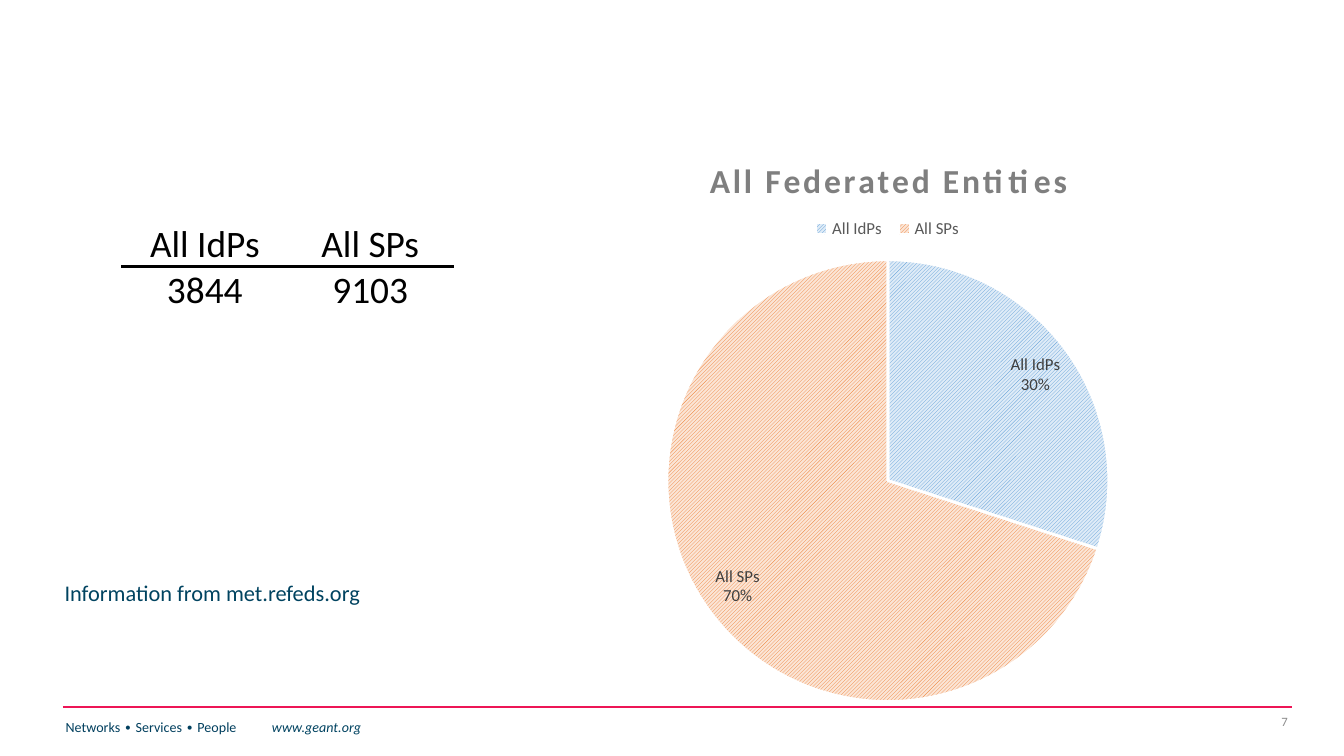
"""Build the slide that compares all federated identity and service providers."""
from dataclasses import dataclass
from typing import Optional

from lxml.etree import SubElement
from pptx import Presentation
from pptx.chart.data import CategoryChartData
from pptx.dml.color import RGBColor
from pptx.enum.chart import XL_CHART_TYPE as ChartType
from pptx.enum.chart import XL_LABEL_POSITION as LabelPosition
from pptx.enum.chart import XL_LEGEND_POSITION as LegendPosition
from pptx.enum.dml import MSO_PATTERN as Pattern
from pptx.enum.shapes import MSO_CONNECTOR as Connector
from pptx.enum.text import MSO_ANCHOR as Anchor
from pptx.enum.text import PP_ALIGN as Align
from pptx.oxml import parse_xml
from pptx.oxml.ns import nsdecls, qn
from pptx.util import Cm, Pt

FONT = "Calibri"
COLOURS = {
    "rule": "ED1556", "footer": "003F5E", "link": "004361", "source": "004360",
    "number": "8C8C8C", "black": "000000", "white": "FFFFFF", "title": "7F7F7F",
    "legend": "595959", "label": "404040", "idp": "5B9BD5", "idp_back": "DEEBF7",
    "sp": "ED7D31", "sp_back": "FBE5D6",
}


@dataclass(frozen=True)
class Span:
    text: str
    size: float
    colour: str
    italic: bool = False


@dataclass(frozen=True)
class Label:
    left: float
    top: float
    width: float
    height: float
    spans: tuple[Span, ...]
    anchor: Anchor = Anchor.TOP
    align: Align = Align.LEFT
    tab: Optional[float] = None


@dataclass(frozen=True)
class Entity:
    name: str
    count: int
    share: int
    front: str
    back: str


LABELS = (
    Label(0.99, 13.46, 8.66, 0.89,
          (Span("Networks ∙ Services ∙ People\t", 7.5, "footer"),
           Span("www.geant.org", 7.5, "link", True)), tab=3.9),
    Label(0.97, 10.8, 8.99, 0.8,
          (Span("Information from met.refeds.org", 12, "source"),), Anchor.MIDDLE),
    Label(23.04, 13.34, 1.55, 0.58, (Span("7", 6.8, "number"),),
          Anchor.MIDDLE, Align.RIGHT),
)
ENTITIES = (
    Entity("All IdPs", 3844, 30, "idp", "idp_back"),
    Entity("All SPs", 9103, 70, "sp", "sp_back"),
)


def rgb(name: str) -> RGBColor:
    return RGBColor.from_string(COLOURS[name])


def style(font, size: float, colour: str, bold: bool = False, italic: bool = False) -> None:
    font.name, font.size = FONT, Pt(size)
    font.bold, font.italic = bold, italic
    font.color.rgb = rgb(colour)


def add_span(para, span: Span) -> None:
    run = para.add_run()
    run.text = span.text
    style(run.font, span.size, span.colour, italic=span.italic)


def draw_label(page, label: Label) -> None:
    box = page.shapes.add_textbox(
        Cm(label.left), Cm(label.top), Cm(label.width), Cm(label.height))
    frame = box.text_frame
    frame.word_wrap = True
    frame.vertical_anchor = label.anchor
    para = frame.paragraphs[0]
    para.alignment = label.align
    if label.tab is not None:
        stops = SubElement(para._p.get_or_add_pPr(), qn("a:tabLst"))
        SubElement(stops, qn("a:tab"), pos=str(Cm(label.tab)), algn="l")
    for span in label.spans:
        add_span(para, span)


def draw_rule(page) -> None:
    rule = page.shapes.add_connector(
        Connector.STRAIGHT, Cm(1.19), Cm(13.36), Cm(24.41), Cm(13.36))
    rule.line.color.rgb = rgb("rule")
    rule.line.width = Pt(1)
    SubElement(rule._element.spPr, qn("a:effectLst"))


def draw_cell(cell, text: str, edge: str) -> None:
    cell.margin_left = cell.margin_right = cell.margin_top = Cm(0.02)
    cell.margin_bottom = 0
    cell.vertical_anchor = Anchor.BOTTOM
    cell.fill.background()
    para = cell.text_frame.paragraphs[0]
    para.alignment = Align.CENTER
    add_span(para, Span(text, 20, "black"))
    cell._tc.get_or_add_tcPr().insert(0, parse_xml(
        f'<a:{edge} {nsdecls("a")} w="{Pt(2)}"><a:solidFill>'
        f'<a:srgbClr val="{COLOURS["black"]}"/></a:solidFill></a:{edge}>'))


def draw_table(page, entities: tuple[Entity, ...]) -> None:
    table = page.shapes.add_table(
        2, len(entities), Cm(2.31), Cm(4.17), Cm(6.25), Cm(1.42)).table
    table.first_row = table.horz_banding = False
    for column, entity in enumerate(entities):
        draw_cell(table.cell(0, column), entity.name, "lnB")
        draw_cell(table.cell(1, column), str(entity.count), "lnT")


def set_layout(element, index: int, **fractions: float) -> None:
    for old in element.findall(qn("c:layout")):
        element.remove(old)
    values = "".join(f'<c:{key} val="{value}"/>' for key, value in fractions.items())
    element.insert(index, parse_xml(
        f'<c:layout {nsdecls("c")}><c:manualLayout><c:xMode val="edge"/>'
        f'<c:yMode val="edge"/>{values}</c:manualLayout></c:layout>'))


def draw_pie(page, entities: tuple[Entity, ...]) -> None:
    data = CategoryChartData()
    data.categories = [entity.name for entity in entities]
    data.add_series("Series 1", [entity.share for entity in entities])
    chart = page.shapes.add_chart(
        ChartType.PIE, Cm(8.08), Cm(2.29), Cm(17.4), Cm(11.33), data).chart
    style(chart.font, 10, "black")

    chart.has_title = True
    title = chart.chart_title
    run = title.text_frame.paragraphs[0].add_run()
    run.text = "All Federated Entities"
    style(run.font, 18, "title", bold=True)
    run.font._element.set("spc", "150")
    title.include_in_layout = False
    set_layout(title._element, 1, x=0.3, y=0.05)

    chart.has_legend = True
    legend = chart.legend
    legend.position = LegendPosition.TOP
    legend.include_in_layout = False
    style(legend.font, 9, "legend")
    set_layout(legend._element, 1, x=0.41, y=0.15, w=0.18, h=0.06)

    plot = chart.plots[0]
    plot.vary_by_categories = True
    set_layout(chart._chartSpace.chart.plotArea, 0, x=0.26, y=0.23, w=0.48, h=0.74)
    series = plot.series[0]
    for index, entity in enumerate(entities):
        part = series.points[index].format
        part.fill.patterned()
        part.fill.pattern = Pattern.LIGHT_UPWARD_DIAGONAL
        part.fill.fore_color.rgb = rgb(entity.front)
        part.fill.back_color.rgb = rgb(entity.back)
        part.line.color.rgb = rgb("white")
        part.line.width = Pt(1.5)

    labels = series.data_labels
    labels.show_value = False
    labels.show_category_name = labels.show_percentage = True
    labels.position = LabelPosition.INSIDE_END
    style(labels.font, 9, "label")
    labels._element.find(qn("c:showBubbleSize")).addnext(
        parse_xml(f'<c:separator {nsdecls("c")}>\n</c:separator>'))


def main() -> None:
    deck = Presentation()
    deck.slide_width, deck.slide_height = Cm(25.4), Cm(14.29)
    page = deck.slides.add_slide(deck.slide_layouts[6])
    draw_rule(page)
    for label in LABELS:
        draw_label(page, label)
    draw_pie(page, ENTITIES)
    draw_table(page, ENTITIES)
    deck.save("out.pptx")


if __name__ == "__main__":
    main()
